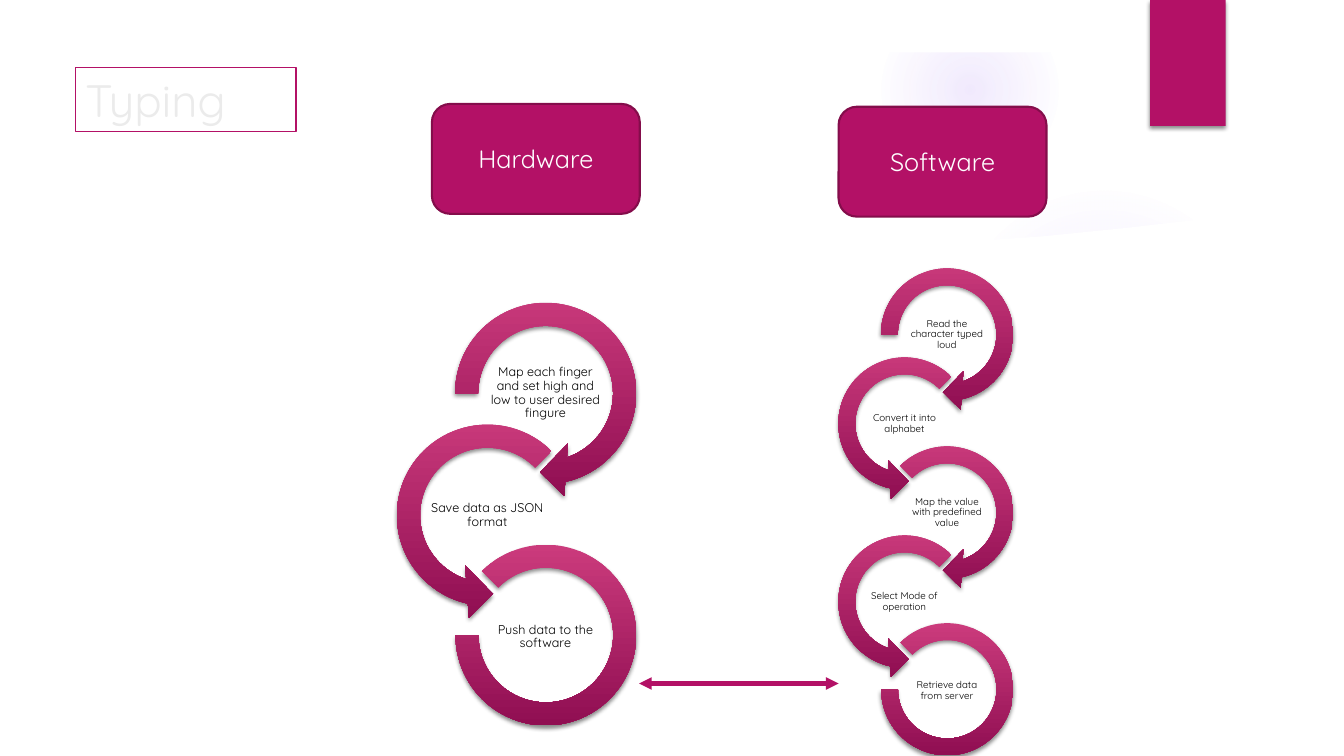
from lxml.etree import SubElement
from pptx import Presentation
from pptx.dml.color import RGBColor
from pptx.enum.shapes import MSO_CONNECTOR, MSO_SHAPE
from pptx.enum.text import MSO_ANCHOR, PP_ALIGN
from pptx.oxml import parse_xml
from pptx.oxml.ns import nsdecls, qn
from pptx.util import Pt

FONT = "Quicksand"
MAGENTA = RGBColor(0xB3, 0x11, 0x66)
DARK_MAGENTA = RGBColor(0x84, 0x0D, 0x4B)
ARC_TOP = RGBColor(0xCB, 0x3B, 0x7C)
ARC_BOTTOM = RGBColor(0x90, 0x0E, 0x52)
GLOW = RGBColor(0x9B, 0x6B, 0xF2)
PALE_GREY = RGBColor(0xEB, 0xEB, 0xEB)
WHITE = RGBColor(0xFF, 0xFF, 0xFF)
BLACK = RGBColor(0, 0, 0)

# Upper edge of the white panel, right to left, after its lower corners
PANEL_EDGE = [(36, 504), (924, 504), (924, 147), (864, 156), (803, 163),
              (743, 169), (683, 173), (624, 176), (566, 178), (433, 178),
              (310, 174), (204, 165)]

FIRST_ARROW = (MSO_SHAPE.CIRCULAR_ARROW, (0.1098, 11.42322, 45, 108, 0.125))
RIGHT_ARROW = (MSO_SHAPE.CIRCULAR_ARROW, (0.1098, 11.42322, 45, 135, 0.125))
LEFT_ARROW = (MSO_SHAPE.LEFT_CIRCULAR_ARROW, (0.1098, 11.42322, 63, 189, 0.125))
LAST_ARC = (MSO_SHAPE.BLOCK_ARC, (135, 108, 0.1274))

HARDWARE_STEPS = [
    "Map each finger and set high and low to user desired fingure",
    "Save data as JSON format",
    "Push data to the software",
]
SOFTWARE_STEPS = [
    "Read the character typed loud",
    "Convert it into alphabet",
    "Map the value with predefined value",
    "Select Mode of operation",
    "Retrieve data from server",
]


def add_plain_shape(slide, kind, left, top, width, height, fill=None):
    shape = slide.shapes.add_shape(kind, Pt(left), Pt(top), Pt(width), Pt(height))
    shape.shadow.inherit = False
    shape.line.fill.background()
    if fill is None:
        shape.fill.background()
    else:
        shape.fill.solid()
        shape.fill.fore_color.rgb = fill
    return shape


def add_outline(shape, color, width):
    shape.line.color.rgb = color
    shape.line.width = Pt(width)


def cast_shadow(shape):
    effects = shape._element.spPr.find(qn("a:effectLst"))
    effects.append(parse_xml(
        f'<a:outerShdw {nsdecls("a")} blurRad="{Pt(3)}" dist="{Pt(2)}" '
        'dir="5400000" rotWithShape="0"><a:srgbClr val="000000">'
        '<a:alpha val="45000"/></a:srgbClr></a:outerShdw>'))


def add_glow(slide, left, top, size, stops):
    """Circle fading outwards; stops are (position, opacity) in percent."""
    glow = add_plain_shape(slide, MSO_SHAPE.OVAL, left, top, size, size, GLOW)
    stop_xml = "".join(
        f'<a:gs pos="{position * 1000}"><a:srgbClr val="{GLOW}">'
        f'<a:alpha val="{opacity * 1000}"/></a:srgbClr></a:gs>'
        for position, opacity in stops)
    gradient = parse_xml(
        f'<a:gradFill {nsdecls("a")}><a:gsLst>{stop_xml}</a:gsLst>'
        '<a:path path="circle"><a:fillToRect l="50000" t="50000" '
        'r="50000" b="50000"/></a:path></a:gradFill>')
    properties = glow._element.spPr
    properties.replace(properties.find(qn("a:solidFill")), gradient)


def add_panel(slide):
    builder = slide.shapes.build_freeform(36, 147, scale=float(Pt(1)))
    builder.add_line_segments(PANEL_EDGE, close=True)
    panel = builder.convert_to_shape()
    panel.shadow.inherit = False
    panel.fill.solid()
    panel.fill.fore_color.rgb = WHITE
    panel.line.fill.background()


def write_text(shape, text, size, color, align=PP_ALIGN.CENTER, spacing=1.0):
    frame = shape.text_frame
    frame.word_wrap = True
    frame.vertical_anchor = MSO_ANCHOR.MIDDLE
    paragraph = frame.paragraphs[0]
    paragraph.text = text
    paragraph.alignment = align
    paragraph.line_spacing = spacing
    font = paragraph.runs[0].font
    for name, value in {"name": FONT, "size": Pt(size)}.items():
        setattr(font, name, value)
    font.color.rgb = color


def add_arc(slide, kind, adjustments, left, top, size):
    arc = add_plain_shape(slide, kind, left, top, size, size)
    for index, value in enumerate(adjustments):
        arc.adjustments[index] = value
    arc.fill.gradient()
    arc.fill.gradient_angle = 270
    for stop, color in zip(arc.fill.gradient_stops, (ARC_TOP, ARC_BOTTOM)):
        stop.color.rgb = color
    cast_shadow(arc)


def add_step_label(slide, text, left, top, width, height, font_size):
    label = slide.shapes.add_textbox(Pt(left), Pt(top), Pt(width), Pt(height))
    frame = label.text_frame
    for side in ("left", "right", "top", "bottom"):
        setattr(frame, f"margin_{side}", Pt(0.5))
    write_text(label, text, font_size, BLACK, spacing=0.9)


def add_process(slide, steps, left, top, size, font_size):
    """Chain of arcs zigzagging down; all offsets are shares of the arc size."""
    for index, text in enumerate(steps):
        x = left - 0.276 * size * (index % 2)
        y = top + 0.578 * size * index
        if index == len(steps) - 1:
            add_arc(slide, *LAST_ARC, x + 0.072 * size, y + 0.062 * size, 0.858 * size)
        else:
            arrow = (FIRST_ARROW if index == 0
                     else LEFT_ARROW if index % 2 else RIGHT_ARROW)
            add_arc(slide, *arrow, x, y, size)
        add_step_label(slide, text, x + 0.221 * size, y + 0.36 * size,
                       0.556 * size, 0.279 * size, font_size)


def add_heading(slide, text, left, top):
    heading = add_plain_shape(slide, MSO_SHAPE.ROUNDED_RECTANGLE,
                              left, top, 148.5, 78.5, MAGENTA)
    add_outline(heading, DARK_MAGENTA, 1.5)
    write_text(heading, text, 18, WHITE)


def add_double_arrow(slide, start, end, y):
    arrow = slide.shapes.add_connector(
        MSO_CONNECTOR.STRAIGHT, Pt(start), Pt(y), Pt(end), Pt(y))
    add_outline(arrow, MAGENTA, 3)
    line = arrow.line._get_or_add_ln()
    for tip in ("a:headEnd", "a:tailEnd"):
        SubElement(line, qn(tip), type="triangle")
    SubElement(arrow._element.spPr, qn("a:effectLst"))


def main():
    presentation = Presentation()
    presentation.slide_width = Pt(960)
    presentation.slide_height = Pt(540)
    slide = presentation.slides.add_slide(presentation.slide_layouts[6])

    add_glow(slide, 677.5, 132, 222, [(0, 7), (36, 6), (69, 0)])
    add_glow(slide, 630, 1, 126, [(0, 14), (36, 7), (73, 0)])
    add_panel(slide)
    add_plain_shape(slide, MSO_SHAPE.RECTANGLE, 0, 0, 960, 37.5, WHITE)
    ribbon = add_plain_shape(slide, MSO_SHAPE.RECTANGLE, 821.5, 0, 54, 90, MAGENTA)
    cast_shadow(ribbon)

    title = add_plain_shape(slide, MSO_SHAPE.RECTANGLE, 54, 48.25, 157.5, 46)
    add_outline(title, MAGENTA, 0.75)
    write_text(title, "Typing", 32.4, PALE_GREY, PP_ALIGN.LEFT)

    add_process(slide, HARDWARE_STEPS, 314.5, 205.75, 150.5, 9)
    add_process(slide, SOFTWARE_STEPS, 621.5, 184, 110, 7)
    add_heading(slide, "Hardware", 308.5, 74.25)
    add_heading(slide, "Software", 599, 76.25)
    add_double_arrow(slide, 456.5, 599, 488.25)

    presentation.save("out.pptx")


if __name__ == "__main__":
    main()
